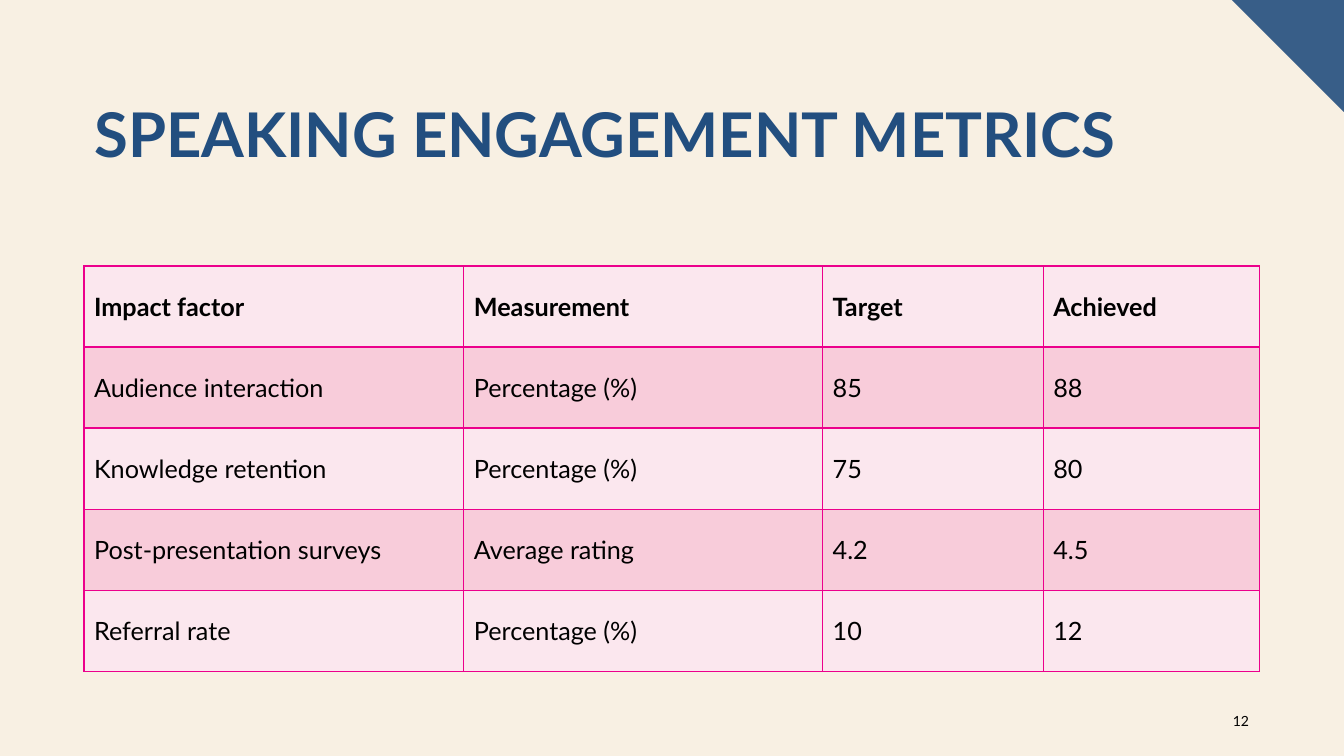
from dataclasses import dataclass

from lxml.etree import SubElement
from pptx import Presentation
from pptx.dml.color import RGBColor as RGB
from pptx.enum.text import MSO_ANCHOR as Anchor, MSO_AUTO_SIZE as Fit, PP_ALIGN as Align
from pptx.oxml.ns import qn
from pptx.util import Pt


@dataclass
class Theme:
    face: str = "Lato"
    back: str = "F8F0E3"
    navy: str = "224E7F"
    fold: str = "385E88"
    ink: str = "000000"
    pale: str = "FBE7EE"
    rose: str = "F8CCDA"
    edge: str = "EC008C"
    head: int = 44
    body: int = 18
    note: int = 10


class Deck:
    def __init__(self, theme, width, height):
        self.theme = theme
        self.file = Presentation()
        self.file.slide_width, self.file.slide_height = Pt(width), Pt(height)
        self.slide = self.file.slides.add_slide(self.file.slide_layouts[5])
        self.paint(self.slide.background, theme.back)

    def paint(self, part, color):
        part.fill.solid()
        part.fill.fore_color.rgb = RGB.from_string(color)

    def letter(self, frame, text, size, color, bold=False, **para):
        frame.text = text
        line = frame.paragraphs[0]
        for name, value in para.items():
            setattr(line, name, value)
        font = line.runs[0].font
        look = {"name": self.theme.face, "size": Pt(size), "bold": bold}
        for name, value in look.items():
            setattr(font, name, value)
        font.color.rgb = RGB.from_string(color)

    def title(self, text, left, top, width, height):
        shape = self.slide.shapes.title
        place = {"left": left, "top": top, "width": width, "height": height}
        for name, value in place.items():
            setattr(shape, name, Pt(value))
        frame = shape.text_frame
        form = {"vertical_anchor": Anchor.TOP, "word_wrap": True, "auto_size": Fit.NONE}
        for name, value in form.items():
            setattr(frame, name, value)
        self.letter(frame, text, self.theme.head, self.theme.navy, True,
                    alignment=Align.LEFT, line_spacing=0.9)

    def label(self, text, *box):
        frame = self.slide.shapes.add_textbox(*map(Pt, box)).text_frame
        frame.word_wrap = True
        frame.vertical_anchor = Anchor.MIDDLE
        self.letter(frame, text, self.theme.note, self.theme.ink, alignment=Align.RIGHT)

    def shape(self, points, color):
        first, *rest = [(Pt(x), Pt(y)) for x, y in points]
        pen = self.slide.shapes.build_freeform(*first)
        pen.add_line_segments(rest, close=True)
        form = pen.convert_to_shape()
        form.shadow.inherit = False
        form.line.fill.background()
        self.paint(form, color)

    def frame(self, cell):
        props = cell._tc.get_or_add_tcPr()
        for side in ("a:lnL", "a:lnR", "a:lnT", "a:lnB"):
            line = SubElement(props, qn(side), w=str(Pt(1)))
            fill = SubElement(line, qn("a:solidFill"))
            SubElement(fill, qn("a:srgbClr"), val=self.theme.edge)

    def table(self, rows, left, top, widths, step):
        size = Pt(sum(widths)), Pt(step * len(rows))
        grid = self.slide.shapes.add_table(
            len(rows), len(widths), Pt(left), Pt(top), *size).table
        grid.horz_banding = False
        for col, width in zip(grid.columns, widths):
            col.width = Pt(width)
        for r, texts in enumerate(rows):
            grid.rows[r].height = Pt(step)
            for c, text in enumerate(texts):
                cell = grid.cell(r, c)
                cell.vertical_anchor = Anchor.MIDDLE
                self.frame(cell)
                self.paint(cell, self.theme.rose if r % 2 else self.theme.pale)
                self.letter(cell.text_frame, text, self.theme.body, self.theme.ink, r == 0)


def main():
    theme = Theme()
    wide, fold = 960, 80
    deck = Deck(theme, wide, 540)

    # Folded corner
    deck.shape([(wide - fold, 0), (wide, 0), (wide, fold)], theme.fold)

    # Title
    deck.title("SPEAKING ENGAGEMENT METRICS", 60.3, 70.6, 839.5, 104.4)

    # Metrics table
    rows = [
        ("Impact factor", "Measurement", "Target", "Achieved"),
        ("Audience interaction", "Percentage (%)", "85", "88"),
        ("Knowledge retention", "Percentage (%)", "75", "80"),
        ("Post-presentation surveys", "Average rating", "4.2", "4.5"),
        ("Referral rate", "Percentage (%)", "10", "12"),
    ]
    deck.table(rows, 60, 190, (271.3, 256.3, 157.6, 154.5), 57.9)

    # Slide number
    deck.label("12", 863.3, 500.4, 36, 28.8)

    deck.file.save("out.pptx")


if __name__ == "__main__":
    main()
